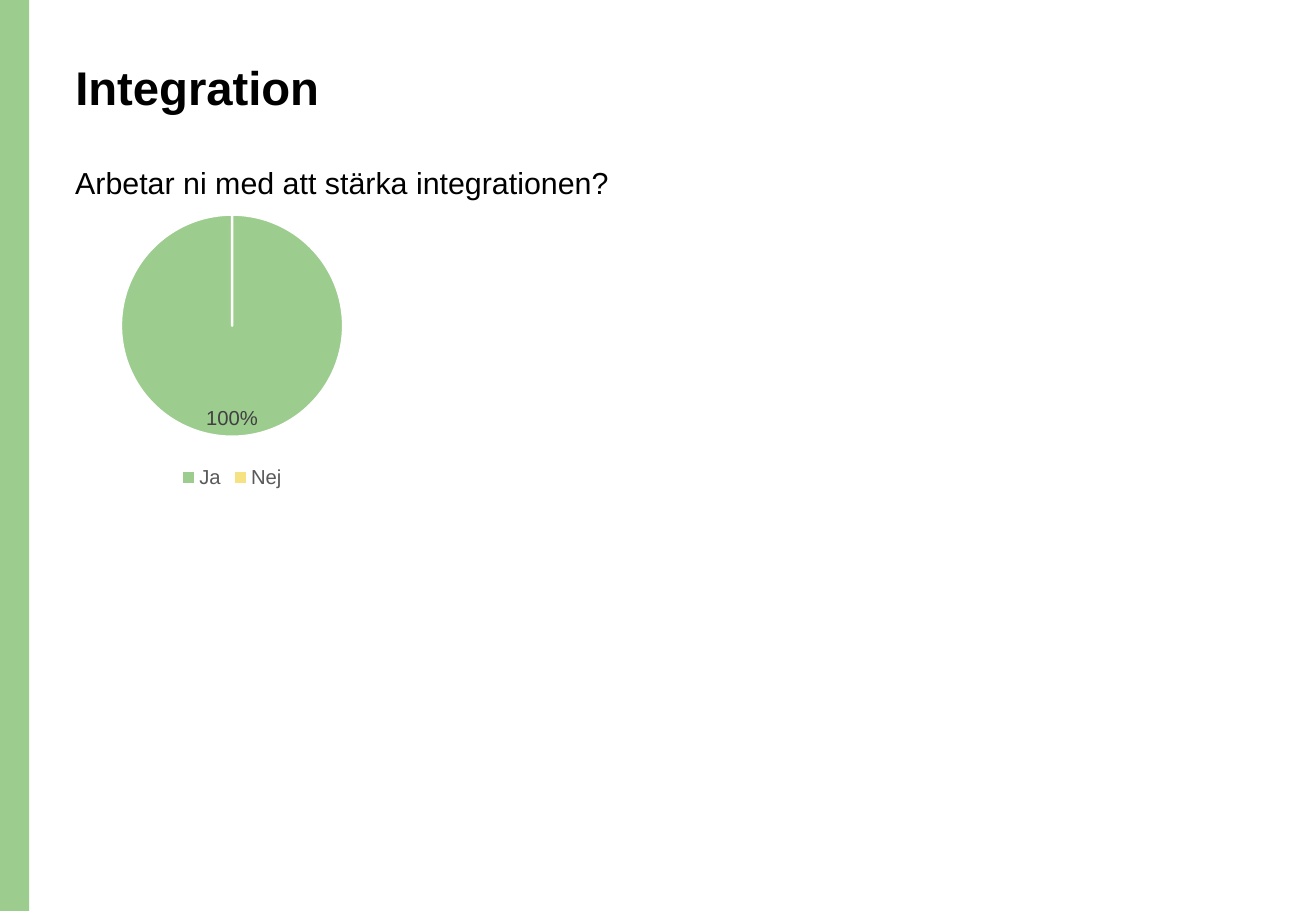
"""Build the Integration slide with its yes/no pie chart."""
from lxml import etree
from pptx import Presentation
from pptx.chart.data import CategoryChartData
from pptx.dml.color import RGBColor
from pptx.enum.chart import XL_CHART_TYPE, XL_LABEL_POSITION, XL_LEGEND_POSITION
from pptx.enum.shapes import MSO_SHAPE
from pptx.enum.text import MSO_ANCHOR, PP_ALIGN
from pptx.oxml import parse_xml
from pptx.oxml.ns import nsdecls, qn
from pptx.util import Inches, Pt

PIE = XL_CHART_TYPE.PIE
INSIDE_END = XL_LABEL_POSITION.INSIDE_END
LEGEND_BOTTOM = XL_LEGEND_POSITION.BOTTOM
RECTANGLE = MSO_SHAPE.RECTANGLE
TOP = MSO_ANCHOR.TOP
LEFT = PP_ALIGN.LEFT
GREEN, YELLOW = "9DCC8F", "F6E183"
MARGIN = 0.52


def color(hex_text):
    return RGBColor.from_string(hex_text)


def style_font(font, size, hex_text, bold=False):
    font.name = "Arial"
    font.size = Pt(size)
    font.bold = bold
    font.color.rgb = color(hex_text)


deck = Presentation()
deck.slide_width = Inches(10.83)
deck.slide_height = Inches(7.5)
page = deck.slides.add_slide(deck.slide_layouts[5])

band = page.shapes.add_shape(RECTANGLE, 0, 0, Inches(0.24), deck.slide_height)
band.shadow.inherit = False
band.fill.solid()
band.fill.fore_color.rgb = color(GREEN)
band.line.fill.background()

title = page.shapes.title
title.left, title.top = Inches(MARGIN), Inches(0.48)
title.width, title.height = Inches(9.34), Inches(1.02)
question = page.shapes.add_textbox(Inches(MARGIN), Inches(1.34), Inches(7.01), Inches(0.57))
for box, text, size, bold in (
    (title, "Integration", 28, True),
    (question, "Arbetar ni med att stärka integrationen?", 18, False),
):
    frame = box.text_frame
    frame.text = text
    frame.word_wrap = True
    frame.vertical_anchor = TOP
    para = frame.paragraphs[0]
    para.alignment = LEFT
    para.line_spacing = 0.9
    style_font(para.runs[0].font, size, "000000", bold)

answers = CategoryChartData(number_format="0%")
answers.categories = ["Ja", "Nej"]
answers.add_series("Series 1", (1, 0))
chart = page.shapes.add_chart(
    PIE, Inches(MARGIN), Inches(1.62), Inches(2.78), Inches(2.44), answers
).chart
chart.has_title = False
style_font(chart.font, 10, "000000")
chart.has_legend = True
chart.legend.position = LEGEND_BOTTOM
chart.legend.include_in_layout = False
style_font(chart.legend.font, 12, "595959")

plot = chart.plots[0]
plot.vary_by_categories = True
series = plot.series[0]
for index, fill in enumerate((GREEN, YELLOW)):
    point = series.points[index].format
    point.fill.solid()
    point.fill.fore_color.rgb = color(fill)
    point.line.color.rgb = color("FFFFFF")
    point.line.width = Pt(1.5)

labels = series.data_labels
labels.show_value = True
labels.position = INSIDE_END
labels.number_format = "0%"
labels.number_format_is_linked = False
style_font(labels.font, 12, "404040")
hidden_label = parse_xml(
    f'<c:dLbl {nsdecls("c")}><c:idx val="1"/><c:delete val="1"/></c:dLbl>'
)
series._element.find(qn("c:dLbls")).insert(0, hidden_label)

plot_area = chart._chartSpace.chart.plotArea
for layout in plot_area.findall(qn("c:layout")):
    plot_area.remove(layout)
layout = etree.Element(qn("c:layout"))
manual = etree.SubElement(layout, qn("c:manualLayout"))
for tag, value in (
    ("layoutTarget", "inner"), ("xMode", "edge"), ("yMode", "edge"),
    ("x", "0.17"), ("y", "0.06"), ("w", "0.66"), ("h", "0.75"),
):
    etree.SubElement(manual, qn(f"c:{tag}")).set("val", value)
plot_area.insert(0, layout)

deck.save("out.pptx")
